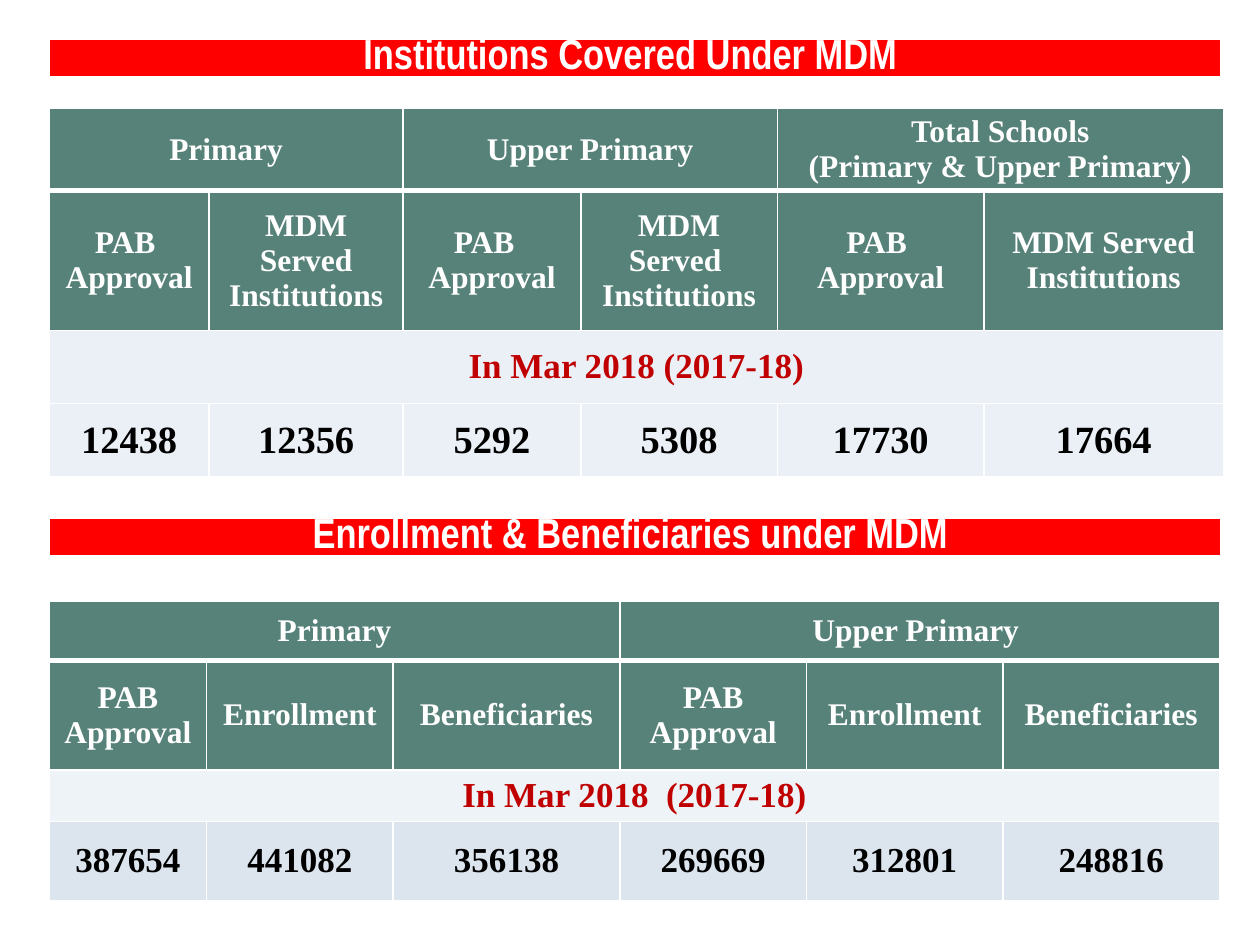
from lxml import etree
from pptx import Presentation
from pptx.dml.color import RGBColor
from pptx.enum.text import MSO_ANCHOR, PP_ALIGN
from pptx.oxml.ns import qn
from pptx.util import Inches, Pt

CENTER, MIDDLE, TOP = PP_ALIGN.CENTER, MSO_ANCHOR.MIDDLE, MSO_ANCHOR.TOP

THEME = {
    "body_font": "Times New Roman", "banner_font": "Arial Narrow",
    "white": "FFFFFF", "black": "000000", "period": "C00000",
    "banner": "FF0000", "header": "578279",
    "banner_size": 24, "header_size": 18, "period_size": 20,
}
LEFT, BANNER_W, BANNER_H = 0.39, 9.3, 0.31

# Header text holds one paragraph per line.
SECTIONS = [
    {
        "banner": "Institutions Covered Under MDM ", "banner_top": 0.31,
        "table_top": 0.86,
        "cols": [1.27, 1.54, 1.41, 1.56, 1.64, 1.9],
        "rows": [0.51, 1.11, 0.58, 0.58],
        "groups": ["Primary", "Upper Primary",
                   "Total Schools\n(Primary & Upper Primary)"],
        "headers": ["PAB \nApproval", "MDM Served Institutions",
                    "PAB  \nApproval", "MDM Served \nInstitutions",
                    "PAB  Approval", "MDM Served Institutions"],
        "period": "In Mar 2018 (2017-18)",
        "values": [12438, 12356, 5292, 5308, 17730, 17664],
        "period_fill": "EAF0F6", "value_fill": "EAF0F6", "value_size": 22,
    },
    {
        "banner": "Enrollment & Beneficiaries under MDM ", "banner_top": 4.11,
        "table_top": 4.77,
        "cols": [1.25, 1.48, 1.8, 1.48, 1.56, 1.72],
        "rows": [0.47, 0.87, 0.38, 0.63],
        "groups": ["Primary", "Upper Primary "],
        "headers": ["PAB Approval", "Enrollment", "Beneficiaries"] * 2,
        "period": "In Mar 2018  (2017-18)",
        "values": [387654, 441082, 356138, 269669, 312801, 248816],
        "period_fill": "EEF3F7", "value_fill": "DCE5EE", "value_size": 20,
    },
]


def set_borders(cell, top, bottom):
    """Give a cell white borders; top and bottom are widths in points."""
    tc_pr = cell._tc.get_or_add_tcPr()
    for tag, width in (("lnL", 1), ("lnR", 1), ("lnT", top), ("lnB", bottom)):
        ln = etree.SubElement(tc_pr, qn(f"a:{tag}"), w=str(Pt(width)))
        fill = etree.SubElement(ln, qn("a:solidFill"))
        etree.SubElement(fill, qn("a:srgbClr"), val=THEME["white"])


def fill_cell(cell, text, fill, size, color, font=THEME["body_font"], anchor=MIDDLE):
    cell.fill.solid()
    cell.fill.fore_color.rgb = RGBColor.from_string(fill)
    cell.vertical_anchor = anchor
    tf = cell.text_frame
    for i, line in enumerate(text.split("\n")):
        p = tf.add_paragraph() if i else tf.paragraphs[0]
        p.alignment = CENTER
        r = p.add_run()
        r.text = line
        r.font.name = font
        r.font.size = Pt(size)
        r.font.bold = True
        r.font.color.rgb = RGBColor.from_string(color)


def add_table(slide, top, cols, rows):
    table = slide.shapes.add_table(
        len(rows), len(cols), Inches(LEFT), Inches(top),
        Inches(sum(cols)), Inches(sum(rows))).table
    table.first_row = table.horz_banding = False
    for column, width in zip(table.columns, cols):
        column.width = Inches(width)
    for row, height in zip(table.rows, rows):
        row.height = Inches(height)
    for i, row in enumerate(table.rows):
        for cell in row.cells:
            set_borders(cell, 3 if i == 1 else 1, 3 if i == 0 else 1)
    return table


def add_banner(slide, text, top):
    cell = add_table(slide, top, [BANNER_W], [BANNER_H]).cell(0, 0)
    cell.margin_top = cell.margin_bottom = 0
    fill_cell(cell, text, THEME["banner"], THEME["banner_size"],
              THEME["white"], THEME["banner_font"], TOP)


def add_section(slide, section):
    cols, groups = section["cols"], section["groups"]
    table = add_table(slide, section["table_top"], cols, section["rows"])
    header = (THEME["header"], THEME["header_size"], THEME["white"])
    span = len(cols) // len(groups)
    for i, group in enumerate(groups):
        first = table.cell(0, i * span)
        first.merge(table.cell(0, (i + 1) * span - 1))
        fill_cell(first, group, *header)
    period = table.cell(2, 0)
    period.merge(table.cell(2, len(cols) - 1))
    fill_cell(period, section["period"], section["period_fill"],
              THEME["period_size"], THEME["period"])
    for i, (label, value) in enumerate(zip(section["headers"], section["values"])):
        fill_cell(table.cell(1, i), label, *header)
        fill_cell(table.cell(3, i), str(value), section["value_fill"],
                  section["value_size"], THEME["black"])
    add_banner(slide, section["banner"], section["banner_top"])


def main():
    prs = Presentation()
    prs.slide_width, prs.slide_height = Inches(10), Inches(7.5)
    slide = prs.slides.add_slide(prs.slide_layouts[6])
    for section in SECTIONS:
        add_section(slide, section)
    prs.save("out.pptx")


if __name__ == "__main__":
    main()
